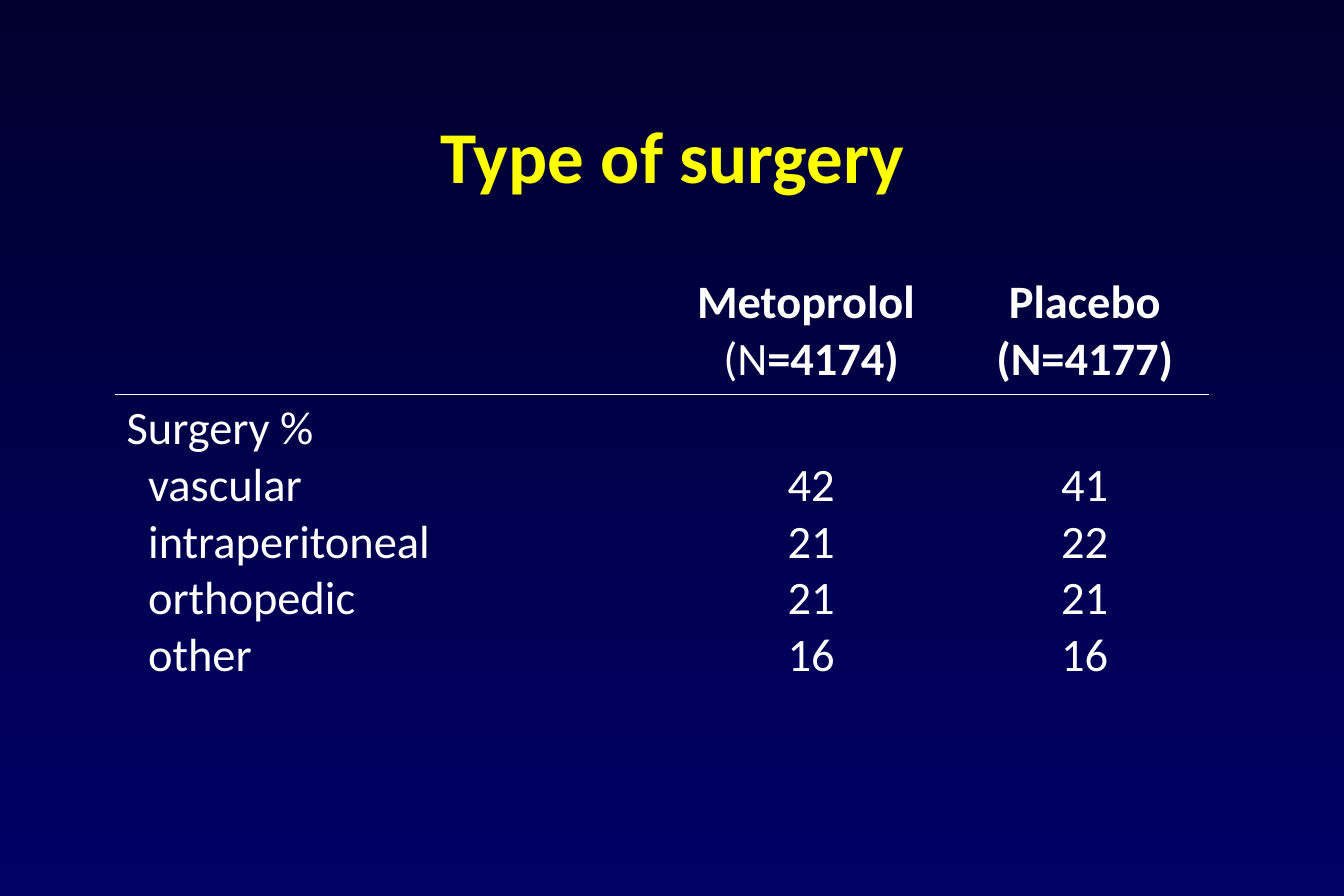
from dataclasses import dataclass

from lxml import etree
from pptx import Presentation
from pptx.dml.color import RGBColor
from pptx.enum.text import MSO_ANCHOR, PP_ALIGN
from pptx.oxml.ns import qn
from pptx.util import Inches, Pt

CENTER, LEFT = PP_ALIGN.CENTER, PP_ALIGN.LEFT
TOP, MIDDLE, BOTTOM = MSO_ANCHOR.TOP, MSO_ANCHOR.MIDDLE, MSO_ANCHOR.BOTTOM
FONT = "Calibri"
COLORS = {"top": "00002F", "bottom": "000066", "title": "FFFF00", "text": "FFFFFF"}
NO_STYLE = "{2D5ABB26-0587-4C30-8999-92F81FD0307C}"
COL_WIDTHS = (4.58, 2.5, 2.08)
ROW_HEIGHTS = (1.05, 2.42)


@dataclass
class Run:
    text: str
    bold: bool = False


@dataclass
class Line:
    runs: list[Run]
    indent: float = 0


@dataclass
class Cell:
    lines: list[Line]
    align: PP_ALIGN = CENTER
    anchor: MSO_ANCHOR = TOP


def add_run(p, run: Run, size: float, color: str) -> None:
    r = p.add_run()
    r.text = run.text
    r.font.name, r.font.size, r.font.bold = FONT, Pt(size), run.bold
    r.font.color.rgb = RGBColor.from_string(COLORS[color])


def add_border(cell, side: str) -> None:
    ln = etree.Element(qn(f"a:{side}"), w=str(Pt(1)))
    fill = etree.SubElement(ln, qn("a:solidFill"))
    etree.SubElement(fill, qn("a:srgbClr"), val=COLORS["text"])
    cell._tc.get_or_add_tcPr().insert(0, ln)


def fill_cell(cell, content: Cell, side: str) -> None:
    cell.fill.background()
    cell.vertical_anchor = content.anchor
    add_border(cell, side)
    tf = cell.text_frame
    for i, line in enumerate(content.lines):
        p = tf.add_paragraph() if i else tf.paragraphs[0]
        p.alignment = content.align
        if line.indent:
            p._p.get_or_add_pPr().set("marL", str(Inches(line.indent)))
        for run in line.runs:
            add_run(p, run, 28, "text")


def values(*numbers: int) -> Cell:
    # Bottom anchoring lines the values up with the surgery types
    return Cell([Line([Run(str(n))]) for n in numbers], anchor=BOTTOM)


SURGERY_TYPES = ("vascular", "intraperitoneal", "orthopedic", "other")
ROWS = [
    [
        Cell([]),
        Cell([Line([Run("Metoprolol ", True)]), Line([Run("(N"), Run("=4174)", True)])]),
        Cell([Line([Run("Placebo", True)]), Line([Run("(N=4177)", True)])]),
    ],
    [
        Cell([Line([Run("Surgery %")])]
             + [Line([Run(name)], 0.18) for name in SURGERY_TYPES], LEFT),
        values(42, 21, 21, 16),
        values(41, 22, 21, 16),
    ],
]


def main() -> None:
    prs = Presentation()
    prs.slide_width, prs.slide_height = Inches(11.25), Inches(7.5)
    s = prs.slides.add_slide(prs.slide_layouts[5])

    # Background gradient, dark at the top
    fill = s.background.fill
    fill.gradient()
    fill.gradient_angle = 270
    for stop, name, position in zip(fill.gradient_stops, ("top", "bottom"), (0, 1)):
        stop.color.rgb = RGBColor.from_string(COLORS[name])
        stop.position = position

    # Title
    title = s.shapes.title
    title.left, title.top = Inches(1.38), Inches(0.67)
    title.width, title.height = Inches(8.5), Inches(1.25)
    tf = title.text_frame
    tf.vertical_anchor = MIDDLE
    p = tf.paragraphs[0]
    p.alignment = CENTER
    add_run(p, Run("Type of surgery", True), 44, "title")

    # Table with one rule between header and body
    frame = s.shapes.add_table(
        len(ROWS), len(COL_WIDTHS), Inches(0.96), Inches(2.25),
        Inches(sum(COL_WIDTHS)), Inches(sum(ROW_HEIGHTS)))
    table = frame.table
    table.first_row = table.horz_banding = False
    for style in frame.element.iter(qn("a:tableStyleId")):
        style.text = NO_STYLE
    for col, width in zip(table.columns, COL_WIDTHS):
        col.width = Inches(width)
    for row, height, cells, side in zip(table.rows, ROW_HEIGHTS, ROWS, ("lnB", "lnT")):
        row.height = Inches(height)
        for cell, content in zip(row.cells, cells):
            fill_cell(cell, content, side)

    prs.save("out.pptx")


if __name__ == "__main__":
    main()
